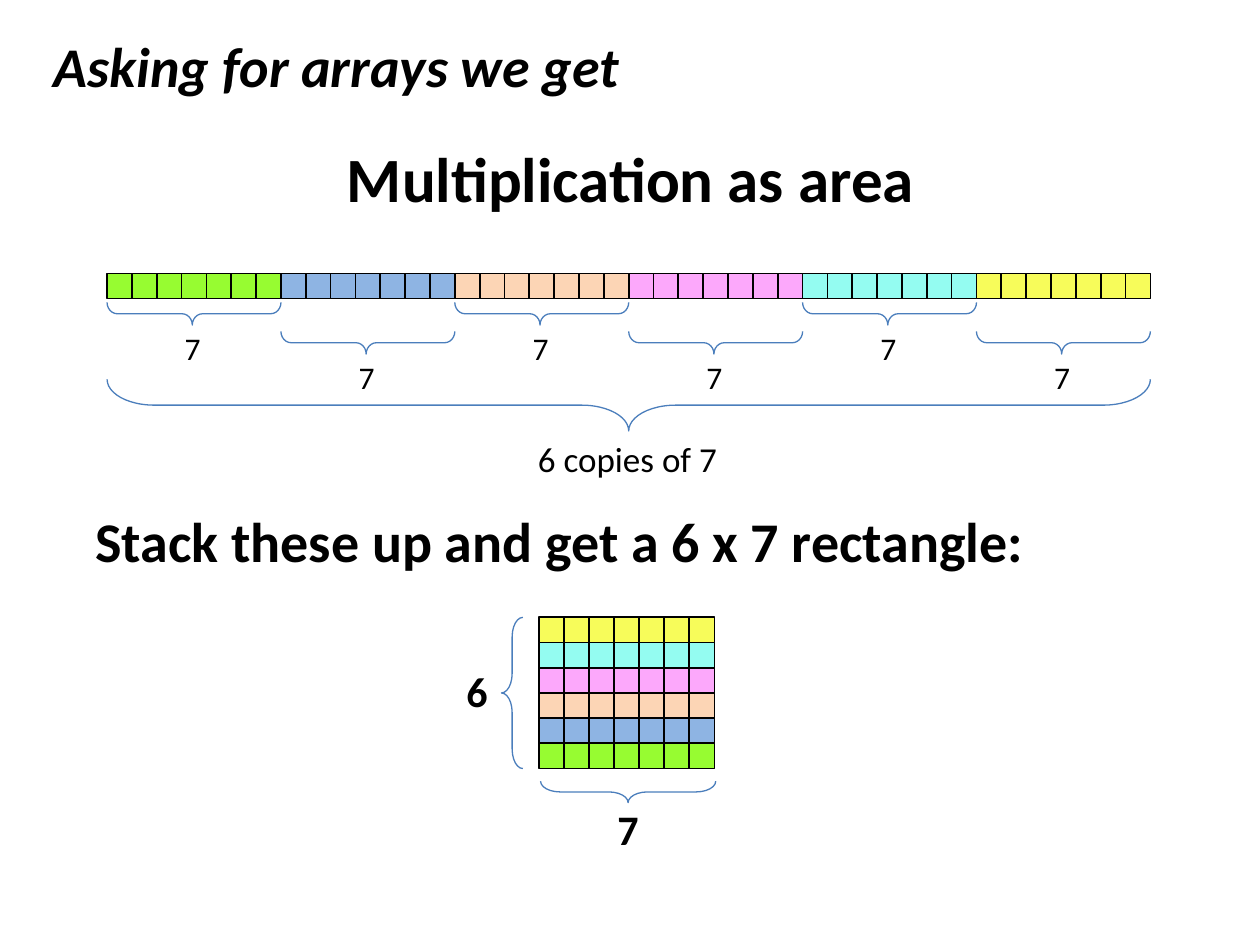
from pptx import Presentation
from pptx.dml.color import RGBColor
from pptx.enum.shapes import MSO_SHAPE
from pptx.enum.text import MSO_ANCHOR, MSO_AUTO_SIZE, PP_ALIGN
from pptx.util import Inches, Pt

BLACK = RGBColor(0x00, 0x00, 0x00)
BLUE = RGBColor(0x4B, 0x7E, 0xBC)
ROW_COLORS = [
    RGBColor(0x97, 0xFC, 0x31),
    RGBColor(0x8E, 0xB4, 0xE3),
    RGBColor(0xFC, 0xD5, 0xB5),
    RGBColor(0xFC, 0xA8, 0xFB),
    RGBColor(0x94, 0xFC, 0xF1),
    RGBColor(0xF7, 0xFC, 0x5A),
]
COLUMNS = 7
CELL = 0.2
ROW_WIDTH = 1.38


class SlideBuilder:
    font = {"name": "Calibri", "size": Pt(18), "bold": False, "italic": False}

    def __init__(self, prs):
        self.s = prs.slides.add_slide(prs.slide_layouts[5])

    def fill_text(self, sp, text, align, anchor, **fmt):
        tf = sp.text_frame
        tf.word_wrap = True
        tf.vertical_anchor = anchor
        p = tf.paragraphs[0]
        p.alignment = align
        r = p.add_run()
        r.text = text
        for name, value in {**self.font, **fmt}.items():
            setattr(r.font, name, value)
        r.font.color.rgb = BLACK
        return tf

    def title(self, text, left, top, width, height, **fmt):
        sp = self.s.shapes.title
        box = {"left": left, "top": top, "width": width, "height": height}
        for name, value in box.items():
            setattr(sp, name, Inches(value))
        tf = self.fill_text(sp, text, PP_ALIGN.CENTER, MSO_ANCHOR.MIDDLE,
                            **fmt)
        tf.auto_size = MSO_AUTO_SIZE.NONE

    def text(self, text, left, top, width, height, align=PP_ALIGN.CENTER,
             anchor=MSO_ANCHOR.TOP, **fmt):
        sp = self.s.shapes.add_textbox(
            Inches(left), Inches(top), Inches(width), Inches(height))
        self.fill_text(sp, text, align, anchor, **fmt)

    def shape(self, kind, left, top, width, height, color, weight):
        sp = self.s.shapes.add_shape(
            kind, Inches(left), Inches(top), Inches(width), Inches(height))
        sp.shadow.inherit = False
        sp.line.color.rgb = color
        sp.line.width = Pt(weight)
        return sp

    def row(self, left, top, width, color):
        for i in range(COLUMNS):
            sp = self.shape(MSO_SHAPE.RECTANGLE, left + i * width / COLUMNS,
                            top, CELL, CELL, BLACK, 1)
            sp.fill.solid()
            sp.fill.fore_color.rgb = color

    def side_brace(self, left, top, width, height, curve=0.91, tip=0.5):
        sp = self.shape(MSO_SHAPE.LEFT_BRACE, left, top, width, height,
                        BLUE, 0.75)
        sp.fill.background()
        sp.adjustments[0] = curve
        sp.adjustments[1] = tip
        return sp

    def under_brace(self, left, top, width, height, **adjust):
        offset = (width - height) / 2
        sp = self.side_brace(left + offset, top - offset, height, width,
                             **adjust)
        sp.rotation = 270


def main():
    prs = Presentation()
    prs.slide_width = Inches(10)
    prs.slide_height = Inches(7.5)
    s = SlideBuilder(prs)

    s.title("Multiplication as area", 1.38, 0.78, 7.25, 1.25,
            size=Pt(36), bold=True)
    s.text("Asking for arrays we get", 0.33, 0.01, 9.17, 1.01,
           PP_ALIGN.LEFT, MSO_ANCHOR.MIDDLE,
           size=Pt(32), bold=True, italic=True)

    for i, color in enumerate(ROW_COLORS):
        left = 0.85 + i * ROW_WIDTH
        drop = 0.23 * (i % 2)
        s.row(left, 2.17, ROW_WIDTH, color)
        s.under_brace(left, 2.4 + drop, ROW_WIDTH, 0.18, curve=0.45, tip=0.49)
        s.text("7", left + 0.23, 2.56 + drop, 0.9, 0.4)
        s.row(4.28, 5.9 - i * CELL, 1.39, color)

    s.under_brace(0.85, 3.01, 8.28, 0.41)
    s.text("6 copies of 7", 4.07, 3.42, 1.82, 0.44, size=Pt(20))

    s.text("Stack these up and get a 6 x 7 rectangle:", 0.66, 3.97, 8.28, 0.64,
           PP_ALIGN.LEFT, size=Pt(32), bold=True)
    s.side_brace(3.98, 4.9, 0.17, 1.2)
    s.text("6", 3.59, 5.23, 0.39, 0.5, size=Pt(24), bold=True)
    s.under_brace(4.29, 6.2, 1.39, 0.17)
    s.text("7", 4.79, 6.33, 0.39, 0.5, size=Pt(24), bold=True)

    prs.save("out.pptx")


if __name__ == "__main__":
    main()
